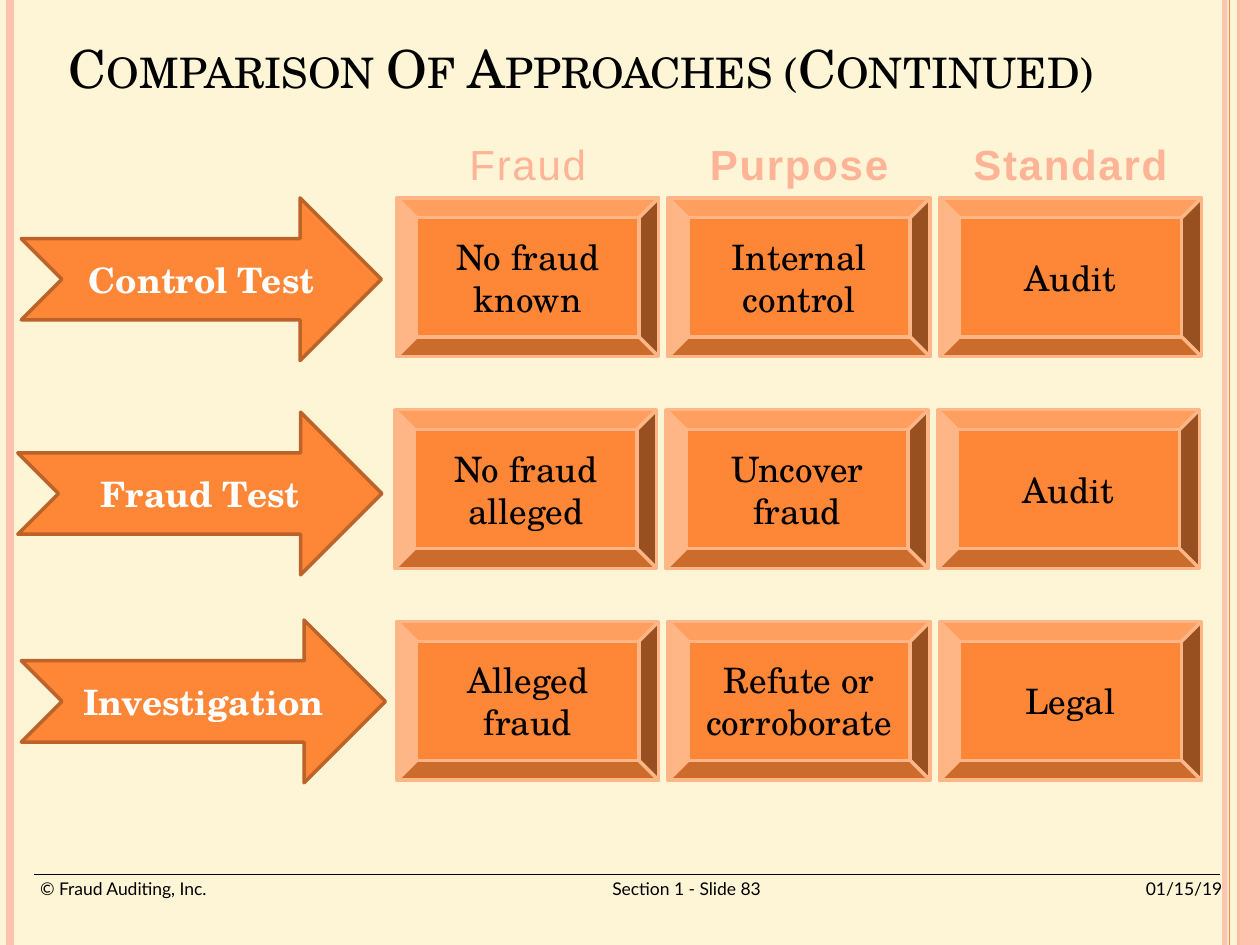
from lxml.etree import SubElement
from pptx import Presentation
from pptx.dml.color import RGBColor
from pptx.enum.shapes import MSO_CONNECTOR, MSO_SHAPE
from pptx.enum.text import MSO_ANCHOR, PP_ALIGN
from pptx.oxml.ns import qn
from pptx.util import Cm, Pt

COLORS = {
    "cream": "FDF5D5", "pink": "FEC3AE", "orange": "FE8637", "rust": "BC6329",
    "peach": "FEB687", "salmon": "FFB397", "black": "000000", "white": "FFFFFF",
}
SERIF = "TeX Gyre Schola"
WIDTH, HEIGHT = 25.4, 19.05

TITLE = "Comparison Of Approaches (Continued)"
FOOTER = "© Fraud Auditing, Inc. \tSection 1 - Slide 83\t01/15/19"
FOOTER_TABS = [(13.03, "ctr"), (23.83, "r")]
# heading, box width, bold
HEADINGS = [("Fraud", 2.92, False), ("Purpose", 4.19, True), ("Standard", 4.5, True)]
# arrow label, arrow (left, top, width), shift of the bevels, bevel texts
ROWS = [
    ("Control Test", (0.43, 3.99, 7.26), 0,
     ["No fraud known", "Internal control", "Audit"]),
    ("Fraud Test", (0.36, 8.31, 7.34), -0.04,
     ["No fraud alleged", "Uncover fraud", "Audit"]),
    ("Investigation", (0.43, 12.5, 7.34), 0,
     ["Alleged fraud", "Refute or corroborate", "Legal"]),
]
ARROW_HEIGHT = 3.28
BEVEL_LEFT, BEVEL_TOP = 8.0, 3.99
BEVEL_WIDTH, BEVEL_HEIGHT = 5.28, 3.2
COLUMN_STEP, ROW_STEP = 5.47, 4.27


def rgb(name):
    return RGBColor.from_string(COLORS[name])


def set_opacity(shape, percent):
    for color in shape._element.spPr.iter(qn("a:srgbClr")):
        SubElement(color, qn("a:alpha"), val=str(percent * 1000))


def add_line(slide, start, end, color, width, opacity=100):
    line = slide.shapes.add_connector(
        MSO_CONNECTOR.STRAIGHT, *[Cm(value) for value in (*start, *end)])
    line.line.color.rgb = rgb(color)
    line.line.width = Pt(width)
    if opacity < 100:
        set_opacity(line, opacity)
    SubElement(line._element.spPr, qn("a:effectLst"))


def add_stripe(slide, x, color, width, opacity=100):
    add_line(slide, (x, 0), (x, HEIGHT), color, width, opacity)


def add_shape(slide, kind, box, fill, outline=None):
    shape = slide.shapes.add_shape(kind, *[Cm(value) for value in box])
    shape.shadow.inherit = False
    shape.fill.solid()
    shape.fill.fore_color.rgb = rgb(fill)
    if outline:
        shape.line.color.rgb = rgb(outline)
        shape.line.width = Pt(2)
    else:
        shape.line.fill.background()
    return shape


def add_edge_band(slide):
    band = add_shape(slide, MSO_SHAPE.RECTANGLE, (24.94, 0, 0.46, HEIGHT), "pink")
    set_opacity(band, 87)


def write(shape, text, size, color, font=SERIF, bold=False,
          align=PP_ALIGN.CENTER, anchor=MSO_ANCHOR.MIDDLE, tabs=(), **run_attributes):
    """Fill the shape with one paragraph; extra keywords go on its run as XML."""
    frame = shape.text_frame
    frame.vertical_anchor = anchor
    paragraph = frame.paragraphs[0]
    paragraph.alignment = align
    if tabs:
        tab_list = SubElement(paragraph._p.get_or_add_pPr(), qn("a:tabLst"))
        for position, kind in tabs:
            SubElement(tab_list, qn("a:tab"), pos=str(Cm(position)), algn=kind)
    run = paragraph.add_run()
    run.text = text
    for name, value in run_attributes.items():
        run._r.get_or_add_rPr().set(name, value)
    paragraph.font.name = font
    paragraph.font.size = Pt(size)
    paragraph.font.bold = bold
    paragraph.font.color.rgb = rgb(color)


def add_text(slide, box, text, size, color, wrap=True, **options):
    shape = slide.shapes.add_textbox(*[Cm(value) for value in box])
    shape.text_frame.word_wrap = wrap
    write(shape, text, size, color, **options)
    return shape


def add_frame(slide):
    footer = add_text(slide, (0.76, 17.7, 24, 0.86), FOOTER, 10, "black", font="Lato",
                      align=PP_ALIGN.LEFT, anchor=MSO_ANCHOR.TOP, tabs=FOOTER_TABS)
    frame = footer.text_frame
    frame.margin_left = frame.margin_right = Cm(0.05)
    frame.margin_top = frame.margin_bottom = 0
    add_line(slide, (0.69, 17.63), (24.59, 17.63), "black", 1)
    add_edge_band(slide)
    add_stripe(slide, 24.69, "pink", 3, 93)
    add_stripe(slide, 24.97, "orange", 1.5)
    add_edge_band(slide)
    add_stripe(slide, 24.79, "orange", 0.75)
    add_stripe(slide, 0.2, "pink", 4.5)


def add_comparison(slide):
    for row, (label, (left, top, width), shift, texts) in enumerate(ROWS):
        arrow = add_shape(slide, MSO_SHAPE.NOTCHED_RIGHT_ARROW,
                          (left, top, width, ARROW_HEIGHT), "orange", "rust")
        write(arrow, label, 20, "white", bold=True)
        for column, text in enumerate(texts):
            box = (BEVEL_LEFT + shift + column * COLUMN_STEP,
                   BEVEL_TOP + row * ROW_STEP, BEVEL_WIDTH, BEVEL_HEIGHT)
            bevel = add_shape(slide, MSO_SHAPE.BEVEL, box, "orange", "peach")
            write(bevel, text, 20, "black")
    for column, (heading, width, bold) in enumerate(HEADINGS):
        center = BEVEL_LEFT + column * COLUMN_STEP + BEVEL_WIDTH / 2
        add_text(slide, (center - width / 2, 2.67, width, 1.27), heading, 24, "salmon",
                 wrap=False, font="Arial", bold=bold, anchor=MSO_ANCHOR.TOP, spc="100")


def main():
    presentation = Presentation()
    presentation.slide_width, presentation.slide_height = Cm(WIDTH), Cm(HEIGHT)
    slide = presentation.slides.add_slide(presentation.slide_layouts[6])
    slide.background.fill.solid()
    slide.background.fill.fore_color.rgb = rgb("cream")
    add_frame(slide)
    add_text(slide, (1.14, 0.43, 23.06, 1.88), TITLE, 30, "black",
             align=PP_ALIGN.LEFT, cap="small")
    add_comparison(slide)
    presentation.save("out.pptx")


if __name__ == "__main__":
    main()
